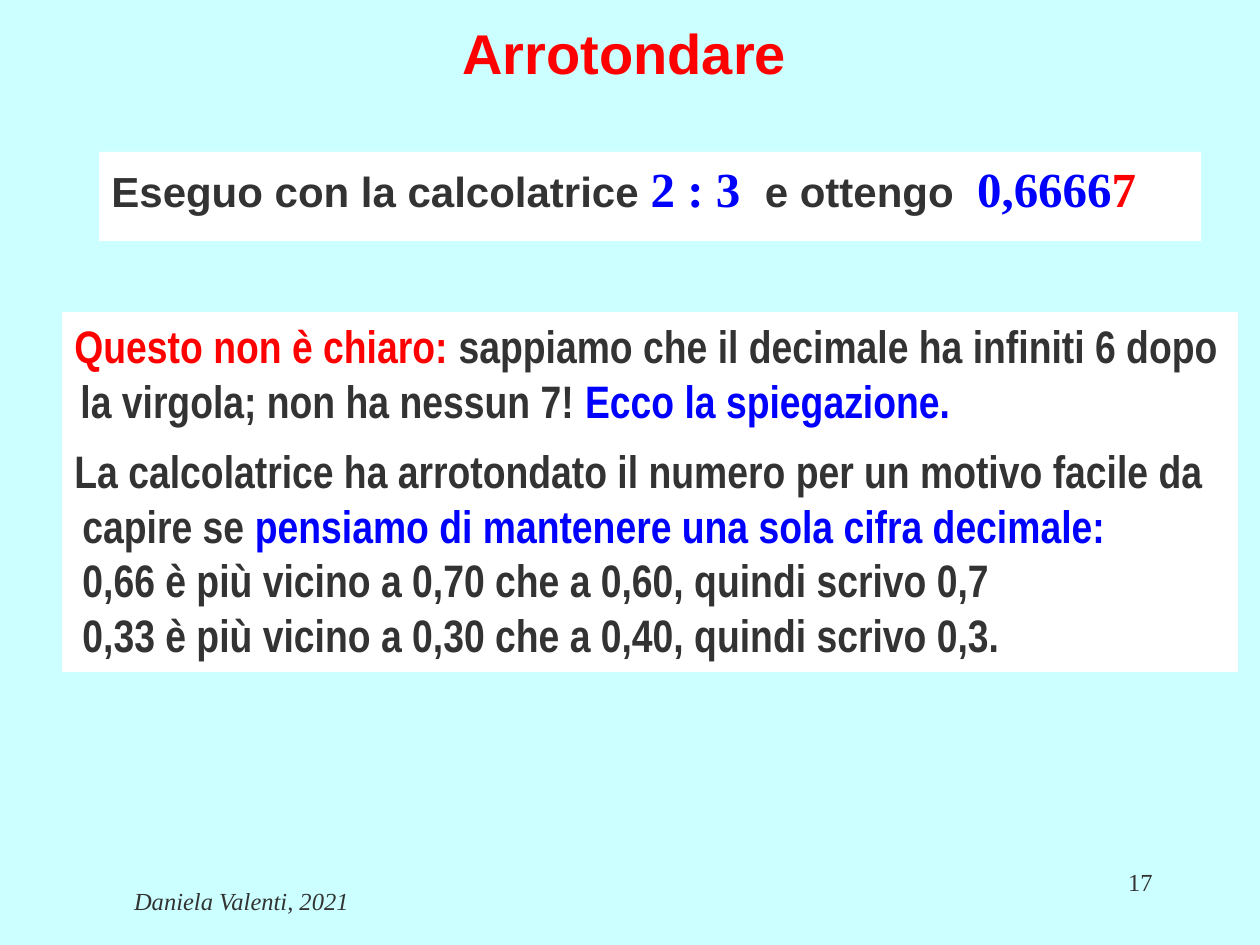
"""Build a slide on rounding decimals."""
from dataclasses import dataclass
from typing import Optional

from pptx import Presentation
from pptx.dml.color import RGBColor
from pptx.enum.shapes import MSO_SHAPE as Shape
from pptx.enum.text import MSO_ANCHOR as Anchor, PP_ALIGN as Align
from pptx.util import Emu, Pt

RED = RGBColor(0xFF, 0x00, 0x00)
BLUE = RGBColor(0x00, 0x00, 0xFF)
GREY = RGBColor(0x33, 0x33, 0x33)
WHITE = RGBColor(0xFF, 0xFF, 0xFF)
AQUA = RGBColor(0xCC, 0xFF, 0xFF)
ARIAL, NARROW, TIMES = "Arial", "Arial Narrow", "Times New Roman"


@dataclass
class Run:
    text: str
    color: RGBColor = GREY
    face: Optional[str] = None
    size: Optional[int] = None


@dataclass
class Para:
    runs: list[Run]
    face: Optional[str] = None
    size: Optional[int] = None
    bold: bool = False
    slant: bool = False
    align: Align = Align.LEFT
    left: int = 0
    hang: int = 0
    before: int = 0


@dataclass
class Box:
    x: int
    y: int
    wide: int
    high: int
    paras: list[Para]
    fill: Optional[RGBColor] = None
    anchor: Anchor = Anchor.TOP


def px(count: int) -> Emu:
    return Emu(round(count * 914400 / 126))


def line(text: str, left: int = 14, hang: int = 6) -> Para:
    return Para([Run(text)], NARROW, 26, bold=True, left=left, hang=hang)


def write(para, data: Para) -> None:
    para.alignment = data.align
    para.space_before = Pt(data.before)
    para.font.bold, para.font.italic = data.bold, data.slant
    if data.face:
        para.font.name, para.font.size = data.face, Pt(data.size)
    if data.hang:
        props = para._p.get_or_add_pPr()
        props.set("marL", str(px(data.left)))
        props.set("indent", str(-px(data.hang)))
    for part in data.runs:
        run = para.add_run()
        run.text = part.text
        run.font.color.rgb = part.color
        if part.face:
            run.font.name, run.font.size = part.face, Pt(part.size)


def draw(slide, box: Box) -> None:
    place = [px(n) for n in (box.x, box.y, box.wide, box.high)]
    if box.fill is None:
        shape = slide.shapes.add_textbox(*place)
    else:
        shape = slide.shapes.add_shape(Shape.RECTANGLE, *place)
        shape.shadow.inherit = False
        shape.fill.solid()
        shape.fill.fore_color.rgb = box.fill
        shape.line.fill.background()
    frame = shape.text_frame
    frame.word_wrap = True
    frame.vertical_anchor = box.anchor
    for i, data in enumerate(box.paras):
        write(frame.add_paragraph() if i else frame.paragraphs[0], data)


TITLE = Para([Run("Arrotondare", RED)], ARIAL, 32, bold=True, align=Align.CENTER)
PAGE = Para([Run("17")], TIMES, 14, align=Align.RIGHT)
NAME = Para([Run("Daniela Valenti, 2021")], TIMES, 14, slant=True, align=Align.CENTER)
SUM = Para([
    Run("Eseguo con la calcolatrice ", GREY, ARIAL, 24),
    Run("2 : 3  ", BLUE, TIMES, 28),
    Run("e ottengo  ", GREY, ARIAL, 24),
    Run("0,6666", BLUE, TIMES, 28),
    Run("7", RED, TIMES, 28),
], bold=True, before=3)
DOUBT = Para([
    Run("Questo non è chiaro: ", RED),
    Run("sappiamo che il decimale ha infiniti 6 dopo la virgola; non ha nessun 7! "),
    Run("Ecco la spiegazione.", BLUE),
], NARROW, 26, bold=True, left=6, hang=6)
CAUSE = Para([
    Run("La calcolatrice ha arrotondato il numero per un motivo facile da capire se "),
    Run("pensiamo di mantenere una sola cifra decimale:", BLUE),
], NARROW, 26, bold=True, left=8, hang=8, before=9)
CASES = [
    line("0,66 è più vicino a 0,70 che a 0,60, quindi scrivo 0,7"),
    line("0,33 è più vicino a 0,30 che a 0,40, quindi scrivo 0,3."),
]
BOXES = [
    Box(26, 0, 1197, 105, [TITLE], anchor=Anchor.MIDDLE),
    Box(903, 861, 262, 63, [PAGE]),
    Box(0, 880, 483, 65, [NAME]),
    Box(99, 152, 1102, 89, [SUM], WHITE),
    Box(62, 312, 1176, 360, [DOUBT, CAUSE, *CASES], WHITE),
]


def main() -> None:
    deck = Presentation()
    deck.slide_width, deck.slide_height = px(1260), px(945)
    slide = deck.slides.add_slide(deck.slide_layouts[6])
    slide.background.fill.solid()
    slide.background.fill.fore_color.rgb = AQUA
    for box in BOXES:
        draw(slide, box)
    deck.save("out.pptx")


if __name__ == "__main__":
    main()
